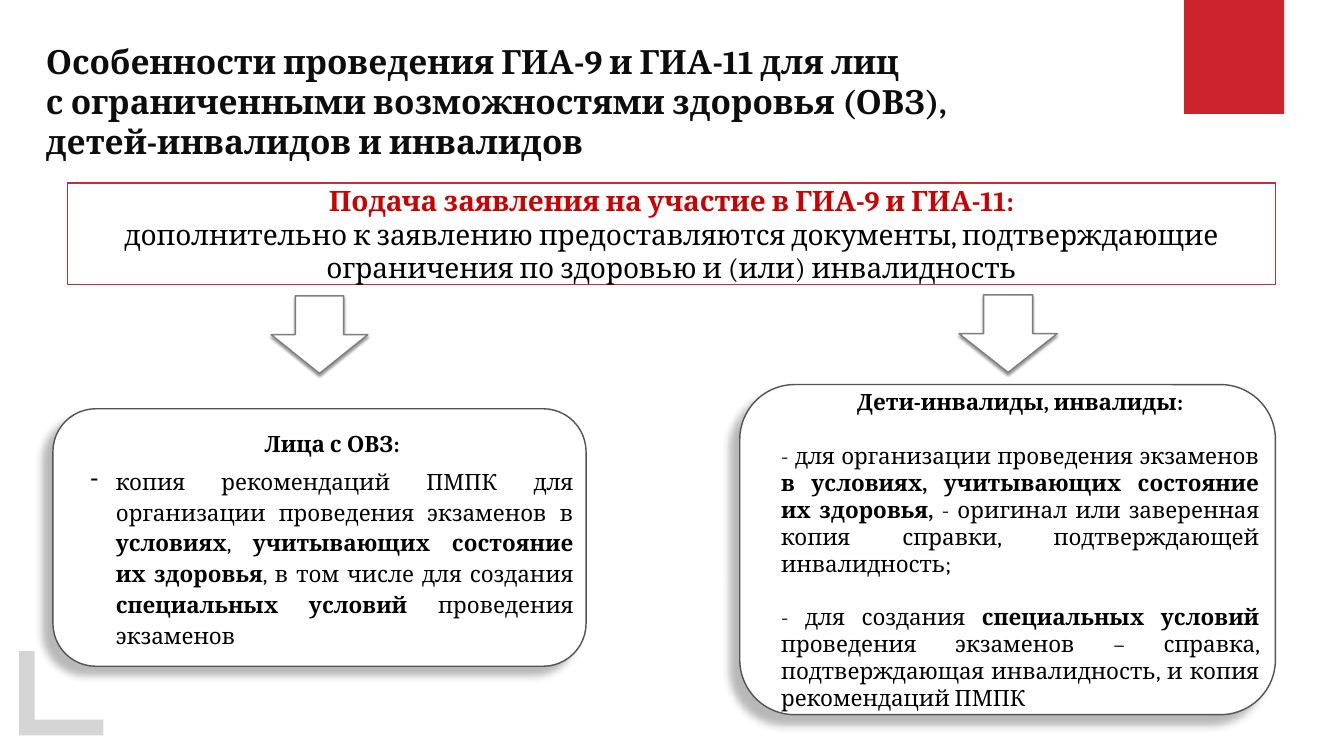
from lxml import etree
from pptx import Presentation
from pptx.dml.color import RGBColor
from pptx.enum.shapes import MSO_SHAPE
from pptx.enum.text import MSO_ANCHOR, MSO_AUTO_SIZE, PP_ALIGN
from pptx.oxml.ns import qn
from pptx.util import Inches, Pt

RECT, ROUNDED, ARROW = MSO_SHAPE.RECTANGLE, MSO_SHAPE.ROUNDED_RECTANGLE, MSO_SHAPE.DOWN_ARROW
LEFT, CENTER, JUSTIFY = PP_ALIGN.LEFT, PP_ALIGN.CENTER, PP_ALIGN.JUSTIFY
MIDDLE = MSO_ANCHOR.MIDDLE
FONT, BLACK, WHITE = "Cambria", "000000", "FFFFFF"
SLIDE_W, SLIDE_H = 26.67, 15

# Content: a paragraph is a list of (text, bold) runs
TITLE = [("Особенности проведения ГИА-9 и ГИА-11 для лиц\n"
          "с ограниченными возможностями здоровья (ОВЗ),\n"
          "детей-инвалидов и инвалидов", True)]
BANNER_HEAD = [("Подача заявления на участие в ГИА-9 и ГИА-11:", True)]
BANNER_BODY = [("дополнительно к заявлению предоставляются документы, подтверждающие "
                "ограничения по здоровью и (или) инвалидность", False)]
LIMITED_HEALTH = [
    [("Лица с ОВЗ:", True)],
    [("копия рекомендаций ПМПК для организации проведения экзаменов в ", False),
     ("условиях", True), (", ", False), ("учитывающих состояние их здоровья", True),
     (", в том числе для создания ", False), ("специальных условий", True),
     (" проведения экзаменов", False)],
]
DISABLED = [
    [("Дети-инвалиды, инвалиды:", True)],
    [("- для организации проведения экзаменов ", False),
     ("в условиях, учитывающих состояние их здоровья, ", True),
     ("- оригинал или заверенная копия справки, подтверждающей инвалидность;", False)],
    [("- для создания ", False), ("специальных условий ", True),
     ("проведения экзаменов – справка, подтверждающая инвалидность, "
      "и копия рекомендаций ПМПК", False)],
]

# Places: left, top, width, height
TITLE_BOX = (0.86, 0.74, 0.8 * SLIDE_W, 2.52)
BANNER_BOX = (1.34, 3.63, 23.97, 2.02)
ARROW_BOXES = [(5.38, 5.87, 1.92, 1.54), (19.03, 5.85, 1.95, 1.54)]
LIMITED_BOX = (1.05, 8.11, 10.58, 5.11)
DISABLED_BOX = (14.68, 7.63, 10.63, 6.55)
RED_BOX = (23.5, -0.05, 1.98, 2.31)
CORNER_LEFT, CORNER_TOP, CORNER_SIZE, CORNER_BAR = 0.38, 12.92, 1.67, 0.31

# Shadows: opacity %, blur pt, distance pt, direction degrees
ARROW_SHADOW = (40, 4, 3, 90)
CARD_SHADOW = (28, 11.8, 19.7, 141)


def color(hex_code):
    return RGBColor.from_string(hex_code)


def paint(shape, fill, line=None, shadow=None):
    shape.fill.solid()
    shape.fill.fore_color.rgb = color(fill)
    if line:
        shape.line.color.rgb = color(line)
        shape.line.width = Pt(2)
    else:
        shape.line.fill.background()
    shape.shadow.inherit = False
    if shadow:
        opacity, blur, distance, direction = shadow
        effects = shape._element.spPr.find(qn("a:effectLst"))
        outer = etree.SubElement(effects, qn("a:outerShdw"), blurRad=str(Pt(blur)),
                                 dist=str(Pt(distance)), dir=str(direction * 60000),
                                 algn="ctr", rotWithShape="0")
        tint = etree.SubElement(outer, qn("a:srgbClr"), val=BLACK)
        etree.SubElement(tint, qn("a:alpha"), val=str(opacity * 1000))
    return shape


def add_block(kind, box, **look):
    return paint(slide.shapes.add_shape(kind, *map(Inches, box)), **look)


def prepare(shape, margin=0):
    frame = shape.text_frame
    frame.word_wrap = True
    frame.auto_size = MSO_AUTO_SIZE.NONE
    frame.vertical_anchor = MIDDLE
    frame.margin_left = frame.margin_right = Inches(margin)
    frame.margin_top = frame.margin_bottom = Inches(margin)
    return frame


def write(frame, runs, size, align=CENTER, ink=BLACK, indent=0, bullet=None,
          hanging=0, spacing=1.0, before=0, after=0):
    first = frame.paragraphs[0]
    paragraph = frame.add_paragraph() if first.runs else first
    props = paragraph._p.get_or_add_pPr()
    props.set("marL", str(Inches(indent)))
    props.set("indent", str(Inches(-hanging)))
    if bullet:
        etree.SubElement(props, qn("a:buFontTx"))
        etree.SubElement(props, qn("a:buChar"), char=bullet)
    paragraph.alignment = align
    paragraph.line_spacing = spacing
    paragraph.space_before, paragraph.space_after = Pt(before), Pt(after)
    for text, bold in runs:
        for number, line in enumerate(text.split("\n")):
            if number:
                paragraph.add_line_break()
            run = paragraph.add_run()
            run.text = line
            run.font.name, run.font.size, run.font.bold = FONT, Pt(size), bold
            run.font.color.rgb = color(ink)


prs = Presentation()
prs.slide_width, prs.slide_height = Inches(SLIDE_W), Inches(SLIDE_H)
slide = prs.slides.add_slide(prs.slide_layouts[5])

# Title
title = slide.shapes.title
title.left, title.top, title.width, title.height = map(Inches, TITLE_BOX)
write(prepare(title, margin=0.05), TITLE, 47.7, align=LEFT, ink="0D0D0D")

# Corner decorations
right, bottom = CORNER_LEFT + CORNER_SIZE, CORNER_TOP + CORNER_SIZE
inner_left, inner_bottom = CORNER_LEFT + CORNER_BAR, bottom - CORNER_BAR
corner = slide.shapes.build_freeform(Inches(CORNER_LEFT), Inches(CORNER_TOP))
corner.add_line_segments([(Inches(x), Inches(y)) for x, y in (
    (inner_left, CORNER_TOP), (inner_left, inner_bottom), (right, inner_bottom),
    (right, bottom), (CORNER_LEFT, bottom))])
paint(corner.convert_to_shape(), "D5D5D5")
add_block(RECT, RED_BOX, fill="CC232C")

# Application banner
banner = prepare(add_block(RECT, BANNER_BOX, fill=WHITE, line="BA3534"))
write(banner, BANNER_HEAD, 40, ink="CC0000")
write(banner, BANNER_BODY, 40)

# Arrows to the two groups
for arrow_box in ARROW_BOXES:
    add_block(ARROW, arrow_box, fill=WHITE, line="7D7D7D", shadow=ARROW_SHADOW)

# Cards of the two groups
card_look = {"fill": WHITE, "line": "545454", "shadow": CARD_SHADOW}
limited = prepare(add_block(ROUNDED, LIMITED_BOX, **card_look))
heading, document = LIMITED_HEALTH
write(limited, heading, 32, indent=0.5, spacing=1.15, after=10)
write(limited, document, 32, align=JUSTIFY, indent=1, hanging=0.5, bullet="-",
      spacing=1.15, after=10)

disabled = prepare(add_block(ROUNDED, DISABLED_BOX, **card_look))
heading, *documents = DISABLED
write(disabled, heading, 32, indent=0.5)
for document in documents:
    write(disabled, document, 32, align=JUSTIFY, indent=0.5, before=38)

prs.save("out.pptx")
